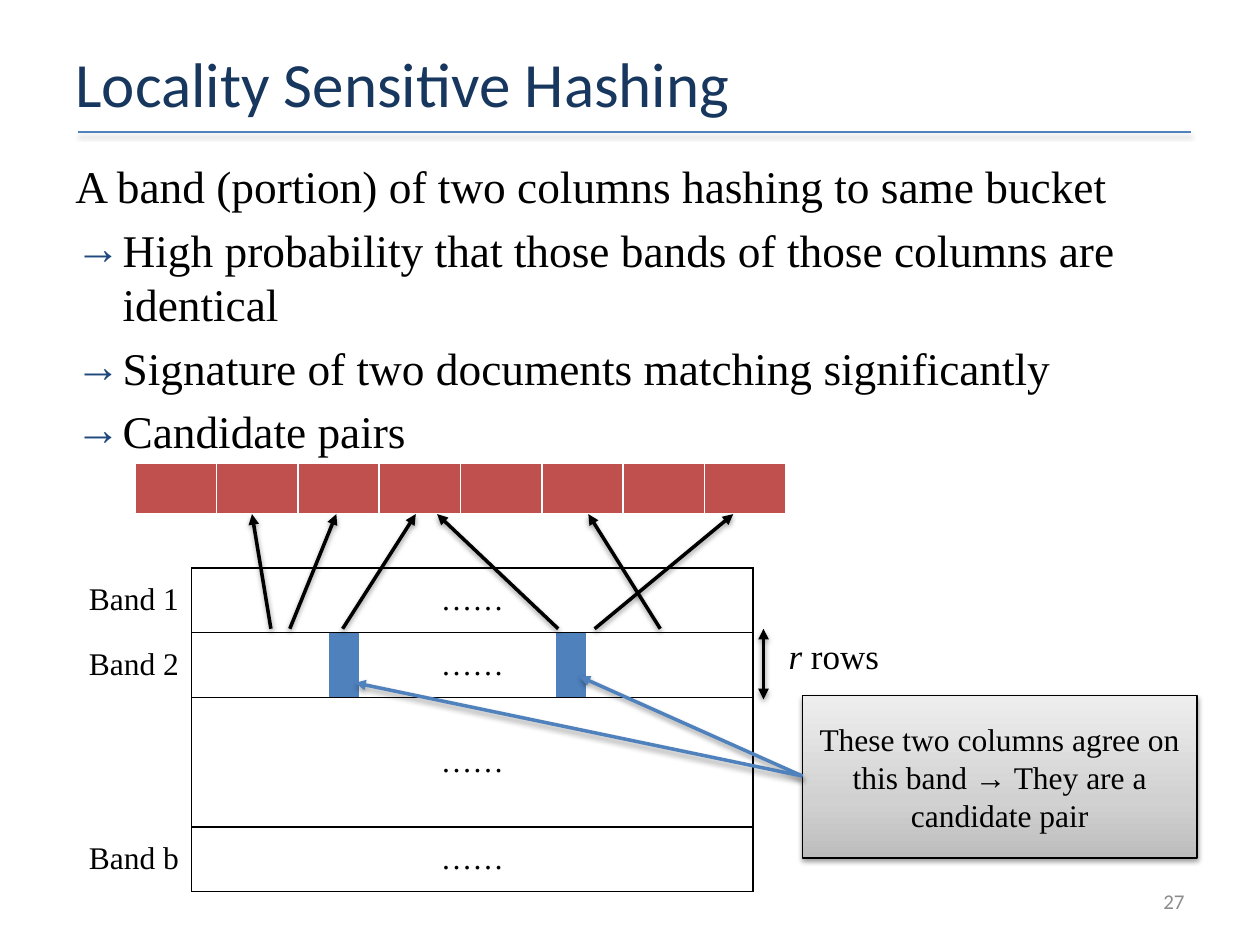
from lxml.etree import SubElement
from pptx import Presentation
from pptx.dml.color import RGBColor
from pptx.enum.shapes import MSO_CONNECTOR as Connector, MSO_SHAPE as Shape
from pptx.enum.text import MSO_ANCHOR as Anchor, PP_ALIGN as Align
from pptx.oxml.ns import qn
from pptx.util import Pt

BLACK, WHITE, BLUE, RED = "000000", "FFFFFF", "4F81BD", "C0504D"
NAVY, ARROW_BLUE, GREY = "17375E", "1F497D", "8C8C8C"


def color(hex_string):
    return RGBColor.from_string(hex_string)


def add_xml(parent, tag, **attributes):
    return SubElement(parent, qn(tag), attributes)


def add_color(parent, hex_string):
    return add_xml(parent, "a:srgbClr", val=hex_string)


class SlideBuilder:
    serif, sans = "Times New Roman", "Calibri"

    def __init__(self, slide):
        self.slide = slide

    def add_runs(self, paragraph, runs, size, font=serif, ink=BLACK):
        for text, italic in runs:
            run = paragraph.add_run()
            run.text = text
            run.font.size, run.font.name = Pt(size), font
            run.font.italic = italic
            run.font.color.rgb = color(ink)

    def text(self, box, runs, size, font=serif, ink=BLACK,
             align=Align.LEFT, anchor=Anchor.TOP):
        frame = self.slide.shapes.add_textbox(*map(Pt, box)).text_frame
        frame.word_wrap, frame.vertical_anchor = True, anchor
        paragraph = frame.paragraphs[0]
        paragraph.alignment = align
        self.add_runs(paragraph, runs, size, font, ink)
        return frame

    def arrow_list(self, box, lead, points, size):
        frame = self.text(box, [(lead, False)], size)
        for point in points:
            paragraph = frame.add_paragraph()
            paragraph.space_before = Pt(5.2)
            self.add_runs(paragraph, [(point, False)], size)
            properties = paragraph._p.get_or_add_pPr()
            indent = Pt(27)
            properties.set("marL", str(indent))
            properties.set("indent", str(-indent))
            add_color(add_xml(properties, "a:buClr"), ARROW_BLUE)
            add_xml(properties, "a:buFont", typeface=self.serif)
            add_xml(properties, "a:buChar", char="→")

    def shadow(self, shape):
        effects = add_xml(shape._element.spPr, "a:effectLst")
        outer = add_xml(effects, "a:outerShdw", blurRad=str(Pt(3.1)),
                        dist=str(Pt(1.6)), dir="5400000", rotWithShape="0")
        add_xml(add_color(outer, BLACK), "a:alpha", val="38000")

    def line(self, start, end, ink=BLACK, width=2, ends=("a:tailEnd",)):
        connector = self.slide.shapes.add_connector(
            Connector.STRAIGHT, *map(Pt, (*start, *end)))
        connector.line.color.rgb = color(ink)
        connector.line.width = Pt(width)
        for tag in ends:
            add_xml(connector.line._get_or_add_ln(), tag, type="triangle")
        self.shadow(connector)

    def callout(self, box, text, size, stops):
        shape = self.slide.shapes.add_shape(
            Shape.FLOWCHART_PROCESS, *map(Pt, box))
        shape.fill.gradient()
        shape.fill.gradient_angle = 90
        stop_list = shape._element.spPr.find(qn("a:gradFill")).find(qn("a:gsLst"))
        for stop in list(stop_list):
            stop_list.remove(stop)
        for position, shade in stops:
            add_color(add_xml(stop_list, "a:gs", pos=str(position * 1000)), shade)
        shape.line.color.rgb = color(BLACK)
        shape.line.width = Pt(0.75)
        self.shadow(shape)
        frame = shape.text_frame
        frame.word_wrap, frame.vertical_anchor = True, Anchor.MIDDLE
        frame.paragraphs[0].alignment = Align.CENTER
        self.add_runs(frame.paragraphs[0], [(text, False)], size)

    def table(self, left, top, widths, heights):
        table = self.slide.shapes.add_table(
            len(heights), len(widths), Pt(left), Pt(top),
            Pt(sum(widths)), Pt(sum(heights))).table
        table.first_row = table.horz_banding = False
        for column, width in zip(table.columns, widths):
            column.width = Pt(width)
        for row, height in zip(table.rows, heights):
            row.height = Pt(height)
        return table

    def cell(self, cell, edges, ink, fill=None):
        cell.margin_left = cell.margin_right = Pt(7.2 if cell.text else 0)
        cell.vertical_anchor = Anchor.MIDDLE
        properties = cell._tc.get_or_add_tcPr()
        for side in "LRTB":
            border = add_xml(properties, f"a:ln{side}", w=str(Pt(1)))
            if side in edges:
                add_color(add_xml(border, "a:solidFill"), ink)
            else:
                add_xml(border, "a:noFill")
        if fill:
            cell.fill.solid()
            cell.fill.fore_color.rgb = color(fill)
        else:
            cell.fill.background()

    def cell_text(self, cell, text, align):
        paragraph = cell.text_frame.paragraphs[0]
        paragraph.alignment = align
        self.add_runs(paragraph, [(text, False)], 18)


def band_edges(row, column, last_column, wide):
    if column == 0:
        return "R"
    if wide:
        return "LRTB"
    return (("L" if column == 1 else "") + ("R" if column == last_column else "")
            + ("T" if row != 3 else "") + ("B" if row != 2 else ""))


def main():
    presentation = Presentation()
    presentation.slide_width, presentation.slide_height = Pt(720), Pt(540)
    slide = presentation.slides.add_slide(presentation.slide_layouts[6])
    builder = SlideBuilder(slide)

    # Title, rule and main points
    builder.line((44.6, 75.6), (680.4, 75.6), BLUE, 1, ends=())
    builder.text((36, 21.6, 648, 51), [("Locality Sensitive Hashing", False)], 36,
                 builder.sans, NAVY, anchor=Anchor.MIDDLE)
    builder.arrow_list(
        (36, 87, 648, 176), "A band (portion) of two columns hashing to same bucket",
        ["High probability that those bands of those columns are identical",
         "Signature of two documents matching significantly",
         "Candidate pairs"], 25.9)
    builder.text((516, 500.5, 168, 28.8), [("27", False)], 12, builder.sans, GREY,
                 Align.RIGHT, Anchor.MIDDLE)

    # Signature matrix split into bands
    wide, narrow = 61.7, 17
    widths = [90, wide] + ([narrow] * 4 + [wide]) * 2
    last = len(widths) - 1
    bands = builder.table(19.5, 324.5, widths, [37] * 5)
    wide_rows = {0: 0, 2: 3, 4: 4}
    for first, final in wide_rows.items():
        bands.cell(first, 1).merge(bands.cell(final, last))
    for row, label in {0: "Band 1", 1: "Band 2", 4: "Band b"}.items():
        builder.cell_text(bands.cell(row, 0), label, Align.RIGHT)
    for row, column in ((0, 1), (1, 6), (2, 1), (4, 1)):
        builder.cell_text(bands.cell(row, column), "……", Align.CENTER)
    for row in range(5):
        for column in range(last + 1):
            edges = band_edges(row, column, last, row in wide_rows and column == 1)
            fill = BLUE if row == 1 and column in (3, 8) else None
            builder.cell(bands.cell(row, column), edges, BLACK, fill)

    # Callout pointing at the two matching columns
    builder.callout(
        (458.6, 397.4, 225.4, 92.9),
        "These two columns agree on this band → They are a candidate pair", 18,
        [(0, "BDBDBD"), (35, "D1D1D1"), (100, "EEEEEE")])
    for target in ((331.2, 386.6), (203, 390.2)):
        builder.line((458.6, 443.5), target, BLUE)

    # Band height
    builder.line((436.3, 359.3), (436.3, 399.6), ends=("a:headEnd", "a:tailEnd"))
    builder.text((443.5, 359.3, 82.8, 31.7), [("r", True), (" rows", False)], 20)

    # Hash buckets
    buckets = builder.table(77.2, 264.6, [46.5] * 8, [28.8])
    for bucket in buckets.iter_cells():
        builder.cell(bucket, "LRTB", WHITE, RED)

    # Columns hashed into buckets
    for column_x, bucket_x in ((195.8, 237.6), (319, 249.8), (154.8, 144),
                               (165.6, 192.2), (339.8, 419), (377.3, 336.2)):
        builder.line((column_x, 359.3), (bucket_x, 293.8))

    presentation.save("out.pptx")


if __name__ == "__main__":
    main()
